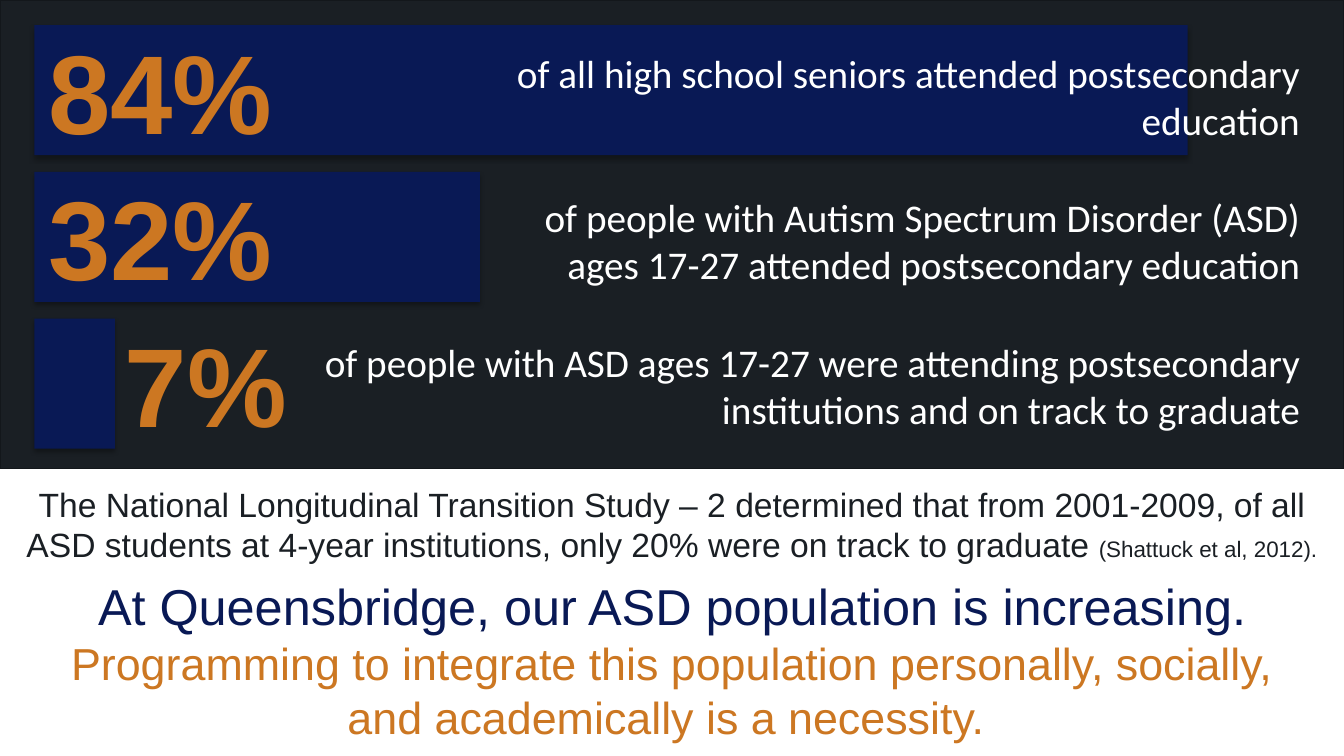
from lxml.etree import SubElement
from pptx import Presentation
from pptx.dml.color import RGBColor
from pptx.enum.shapes import MSO_SHAPE
from pptx.enum.text import PP_ALIGN
from pptx.oxml.ns import qn
from pptx.util import Inches, Pt

CHARCOAL = RGBColor(0x1A, 0x1F, 0x24)
CHARCOAL_EDGE = RGBColor(0x13, 0x17, 0x1B)
NAVY = RGBColor(0x09, 0x19, 0x55)
ORANGE = RGBColor(0xCC, 0x77, 0x22)
WHITE = RGBColor(0xFF, 0xFF, 0xFF)

presentation = Presentation()
presentation.slide_width = Inches(13.33)
presentation.slide_height = Inches(7.5)
slide = presentation.slides.add_slide(presentation.slide_layouts[6])


def add_rectangle(left, top, width, height, fill):
    shape = slide.shapes.add_shape(
        MSO_SHAPE.RECTANGLE, Inches(left), Inches(top), Inches(width), Inches(height))
    shape.shadow.inherit = False
    shape.fill.solid()
    shape.fill.fore_color.rgb = fill
    shape.line.fill.background()
    return shape


def add_text(left, top, width, height, *runs, font="Arial", bold=False, align=PP_ALIGN.LEFT):
    """Add a one-paragraph text box; each run is (text, size in points, colour)."""
    box = slide.shapes.add_textbox(Inches(left), Inches(top), Inches(width), Inches(height))
    box.text_frame.word_wrap = True
    paragraph = box.text_frame.paragraphs[0]
    paragraph.alignment = align
    for text, size, color in runs:
        run = paragraph.add_run()
        run.text = text
        run.font.name = font
        run.font.size = Pt(size)
        run.font.bold = bold
        run.font.color.rgb = color


panel = add_rectangle(0, 0, 13.33, 4.65, CHARCOAL)
panel.line.color.rgb = CHARCOAL_EDGE
panel.line.width = Pt(1)

# Bar width, percentage and its left edge, caption and its left edge and top
statistics = [
    (11.44, "84%", 0.38, "of all high school seniors attended postsecondary education", 4.41, 0.44),
    (4.42, "32%", 0.38, "of people with Autism Spectrum Disorder (ASD) ages 17-27 "
     "attended postsecondary education", 4.8, 1.87),
    (0.8, "7%", 1.14, "of people with ASD ages 17-27 were attending postsecondary "
     "institutions and on track to graduate", 3.08, 3.31),
]
CAPTION_RIGHT = 12.99
for index, (bar_width, percentage, percentage_left, caption,
            caption_left, caption_top) in enumerate(statistics):
    bar_top = 0.25 + index * 1.455
    bar = add_rectangle(0.34, bar_top, bar_width, 1.29, NAVY)
    effects = bar._element.spPr.find(qn("a:effectLst"))
    shadow = SubElement(effects, qn("a:outerShdw"), blurRad=str(Pt(3.5)),
                        dist=str(Pt(2.2)), dir="5400000", rotWithShape="0")
    shadow_color = SubElement(shadow, qn("a:srgbClr"), val="000000")
    SubElement(shadow_color, qn("a:alpha"), val="32000")
    add_text(percentage_left, bar_top - 0.08, 2.74, 1.45, (percentage, 80, ORANGE), bold=True)
    add_text(caption_left, caption_top, CAPTION_RIGHT - caption_left, 1.04,
             (caption, 28, WHITE), font="Calibri", align=PP_ALIGN.RIGHT)

add_text(0, 4.75, 13.33, 0.91,
         ("The National Longitudinal Transition Study – 2 determined that from 2001-2009, of all "
          "ASD students at 4-year institutions, only 20% were on track to graduate ", 24, CHARCOAL),
         ("(Shattuck et al, 2012).", 16, CHARCOAL), align=PP_ALIGN.CENTER)
add_text(0.26, 5.66, 12.82, 1.78,
         ("At Queensbridge, our ASD population is increasing. ", 36, NAVY),
         ("Programming to integrate this population personally, socially, "
          "and academically is a necessity. ", 32, ORANGE), align=PP_ALIGN.CENTER)

presentation.save("out.pptx")
